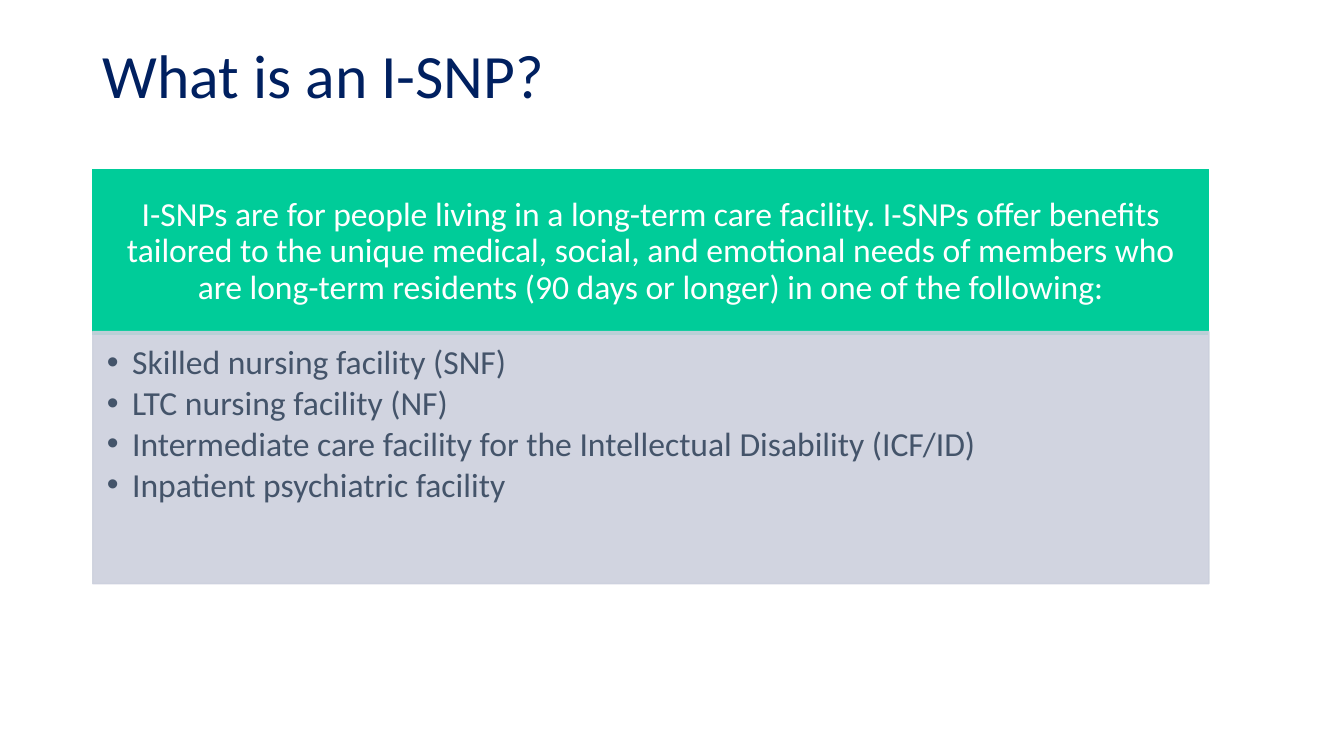
from lxml.etree import SubElement
from pptx import Presentation
from pptx.dml.color import RGBColor
from pptx.enum.shapes import MSO_SHAPE
from pptx.enum.text import MSO_ANCHOR, MSO_AUTO_SIZE, PP_ALIGN
from pptx.oxml.ns import qn
from pptx.util import Inches, Pt

TITLE = "What is an I-SNP?"
INTRO = (
    "I-SNPs are for people living in a long-term care facility. "
    "I-SNPs offer benefits tailored to the unique medical, social, and "
    "emotional needs of members who are long-term residents "
    "(90 days or longer) in one of the following:"
)
PLACES = [
    "Skilled nursing facility (SNF)",
    "LTC nursing facility (NF)",
    "Intermediate care facility for the Intellectual Disability (ICF/ID)",
    "Inpatient psychiatric facility",
]
NAVY, GREEN, GRAY, SLATE, WHITE = "002060", "00CC99", "CCD0DD", "44546A", "FFFFFF"
LEFT, WIDTH = 0.92, 11.07


def color(code):
    return RGBColor.from_string(code)


def place(shape, left, top, width, height):
    shape.left, shape.top = Inches(left), Inches(top)
    shape.width, shape.height = Inches(width), Inches(height)


def paint(shape, code, line, alpha=None):
    """Fill and outline a shape in one colour; alpha is opacity in percent."""
    shape.fill.solid()
    shape.fill.fore_color.rgb = color(code)
    shape.line.color.rgb = color(code)
    shape.line.width = Pt(line)
    if alpha:
        for tint in shape.element.spPr.iter(qn("a:srgbClr")):
            SubElement(tint, qn("a:alpha"), val=str(alpha * 1000))


def bullet(para, indent):
    props = para._p.get_or_add_pPr()
    props.set("marL", str(Inches(indent)))
    props.set("indent", str(-Inches(indent)))
    SubElement(props, qn("a:buFont"), typeface="Arial")
    SubElement(props, qn("a:buChar"), char="•")


def write(shape, lines, size=24, code=WHITE, align=PP_ALIGN.LEFT,
          anchor=MSO_ANCHOR.TOP, inset=(0.1, 0.05, 0.1, 0.05),
          after=0, indent=0):
    frame = shape.text_frame
    frame.word_wrap = True
    frame.auto_size = MSO_AUTO_SIZE.NONE
    frame.vertical_anchor = anchor
    (frame.margin_left, frame.margin_top,
     frame.margin_right, frame.margin_bottom) = map(Inches, inset)
    frame.text = "\n".join(lines)
    for para in frame.paragraphs:
        if indent:
            bullet(para, indent)
        para.alignment = align
        para.line_spacing = 0.9
        para.space_before = Pt(0)
        para.space_after = Pt(after)
        font = para.runs[0].font
        font.name, font.size = "Calibri", Pt(size)
        font.color.rgb = color(code)


def main():
    deck = Presentation()
    deck.slide_width, deck.slide_height = Inches(13.33), Inches(7.5)
    slide = deck.slides.add_slide(deck.slide_layouts[1])
    title, body = slide.placeholders

    place(title, LEFT, 0.4, 11.5, 0.93)
    write(title, [TITLE], size=44, code=NAVY)

    head = slide.shapes.add_shape(
        MSO_SHAPE.RECTANGLE, *map(Inches, (LEFT, 1.68, WIDTH, 1.64)))
    head.shadow.inherit = False
    paint(head, GREEN, 0.5)
    write(head, [INTRO], align=PP_ALIGN.CENTER, anchor=MSO_ANCHOR.MIDDLE,
          inset=(0.19, 0.11, 0.19, 0.11))

    place(body, LEFT, 3.29, WIDTH, 2.5)
    paint(body, GRAY, 1, alpha=90)
    write(body, PLACES, code=SLATE, inset=(0.14, 0.14, 0.19, 0.21),
          after=3.2, indent=0.25)
    # The list panel overlaps the lower edge of the green one
    head.element.addnext(body.element)

    deck.save("out.pptx")


if __name__ == "__main__":
    main()
